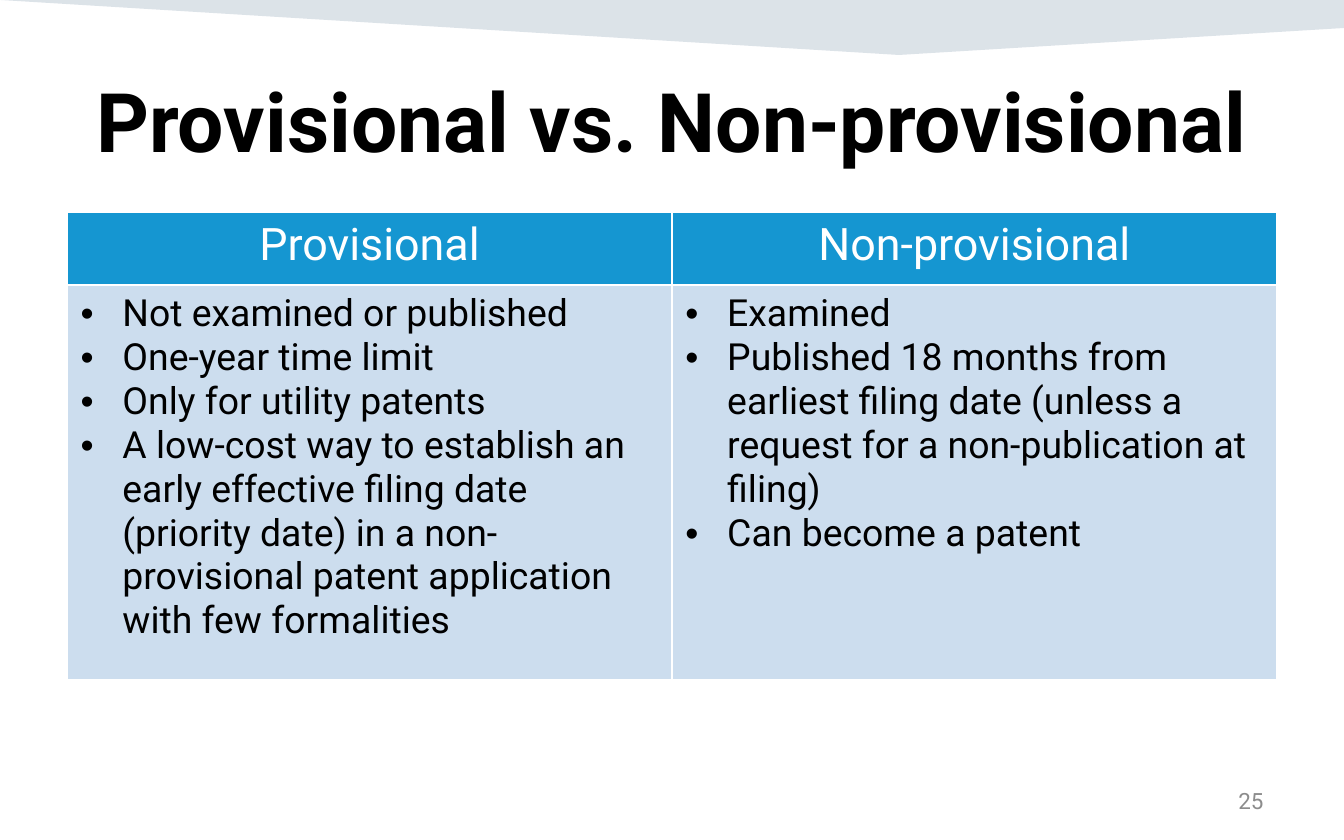
from lxml import etree
from pptx import Presentation
from pptx import util as u
from pptx.dml.color import RGBColor
from pptx.enum import text
from pptx.oxml import parse_xml
from pptx.oxml.ns import nsdecls, qn

TITLE = "Provisional vs. Non-provisional"
COLUMNS = [
    ("Provisional", [
        "Not examined or published",
        "One-year time limit",
        "Only for utility patents",
        "A low-cost way to establish an early effective filing date (priority date) "
        "in a non-provisional patent application with few formalities",
    ]),
    ("Non-provisional", [
        "Examined",
        "Published 18 months from earliest filing date (unless a request for a "
        "non-publication at filing)",
        "Can become a patent",
    ]),
]
PAGE = "25"

THEME = {
    "font": "Roboto",
    "title": {"size": 44, "color": "000000", "bold": True},
    "head": {"size": 24, "color": "FFFFFF", "bold": False},
    "body": {"size": 20, "color": "000000", "bold": False},
    "page": {"size": 12, "color": "8C8C8C", "bold": False},
    "head_fill": "1596D1",
    "body_fill": "CCDDEE",
    "border": "FFFFFF",
    "band": "164469",
    "band_alpha": 15,
}
WIDTH, HEIGHT = 25.4, 15.88
MARGIN = 1.27
ROWS = [1.37, 7.47]
INDENT = u.Cm(0.79)
BAND = [(0, 0), (WIDTH, 0), (WIDTH, 0.53), (16.99, 1.04)]


def rgb(value):
    return RGBColor.from_string(value)


def paint(target, color):
    target.fill.solid()
    target.fill.fore_color.rgb = rgb(color)


def place(sp, left, top, width, height):
    box = {"left": left, "top": top, "width": width, "height": height}
    for name, value in box.items():
        setattr(sp, name, u.Cm(value))


def add_bullet(p):
    pPr = p._p.get_or_add_pPr()
    pPr.set("marL", str(INDENT))
    pPr.set("indent", str(-INDENT))
    etree.SubElement(pPr, qn("a:buFont")).set("typeface", "Arial")
    etree.SubElement(pPr, qn("a:buChar")).set("char", "•")


def write(tf, lines, role, align, bullets=False):
    style = THEME[role]
    for i, line in enumerate(lines):
        p = tf.paragraphs[0] if i == 0 else tf.add_paragraph()
        if bullets:
            add_bullet(p)
        p.alignment = align
        r = p.add_run()
        r.text = line
        values = {"name": THEME["font"], "size": u.Pt(style["size"]), "bold": style["bold"]}
        for name, value in values.items():
            setattr(r.font, name, value)
        r.font.color.rgb = rgb(style["color"])


def add_borders(cell):
    tcPr = cell._tc.get_or_add_tcPr()
    for i, side in enumerate("LRTB"):
        tcPr.insert(i, parse_xml(
            f'<a:ln{side} {nsdecls("a")} w="{u.Pt(1)}"><a:solidFill>'
            f'<a:srgbClr val="{THEME["border"]}"/></a:solidFill></a:ln{side}>'))


def add_band(s):
    points = [(u.Cm(x), u.Cm(y)) for x, y in BAND]
    fb = s.shapes.build_freeform(*points[0])
    fb.add_line_segments(points[1:], close=True)
    sp = fb.convert_to_shape()
    sp.shadow.inherit = False
    sp.line.fill.background()
    paint(sp, THEME["band"])
    color = sp._element.spPr.find(".//" + qn("a:srgbClr"))
    etree.SubElement(color, qn("a:alpha")).set("val", str(THEME["band_alpha"] * 1000))


def add_comparison(s):
    width = WIDTH - 2 * MARGIN
    frame = s.shapes.add_table(len(ROWS), len(COLUMNS), u.Cm(MARGIN), u.Cm(4.02),
                               u.Cm(width), u.Cm(sum(ROWS)))
    table = frame.table
    for row, height in zip(table.rows, ROWS):
        row.height = u.Cm(height)
    for c, (head, items) in enumerate(COLUMNS):
        table.columns[c].width = u.Cm(width / len(COLUMNS))
        write(table.cell(0, c).text_frame, [head], "head", text.PP_ALIGN.CENTER)
        write(table.cell(1, c).text_frame, items, "body", text.PP_ALIGN.LEFT, bullets=True)
        for r, fill in enumerate(("head_fill", "body_fill")):
            paint(table.cell(r, c), THEME[fill])
            add_borders(table.cell(r, c))


def add_page_number(s):
    sp = s.shapes.add_textbox(0, 0, 0, 0)
    place(sp, 18.21, 14.71, 5.92, 0.84)
    tf = sp.text_frame
    tf.word_wrap = True
    tf.vertical_anchor = text.MSO_ANCHOR.MIDDLE
    write(tf, [PAGE], "page", text.PP_ALIGN.RIGHT)


def main():
    prs = Presentation()
    prs.slide_width, prs.slide_height = u.Cm(WIDTH), u.Cm(HEIGHT)
    s = prs.slides.add_slide(prs.slide_layouts[5])
    add_band(s)
    title = s.shapes.title
    place(title, 0.51, 1.04, 24.38, 2.46)
    title.text_frame.vertical_anchor = text.MSO_ANCHOR.MIDDLE
    write(title.text_frame, [TITLE], "title", text.PP_ALIGN.CENTER)
    add_comparison(s)
    add_page_number(s)
    prs.save("out.pptx")


if __name__ == "__main__":
    main()
